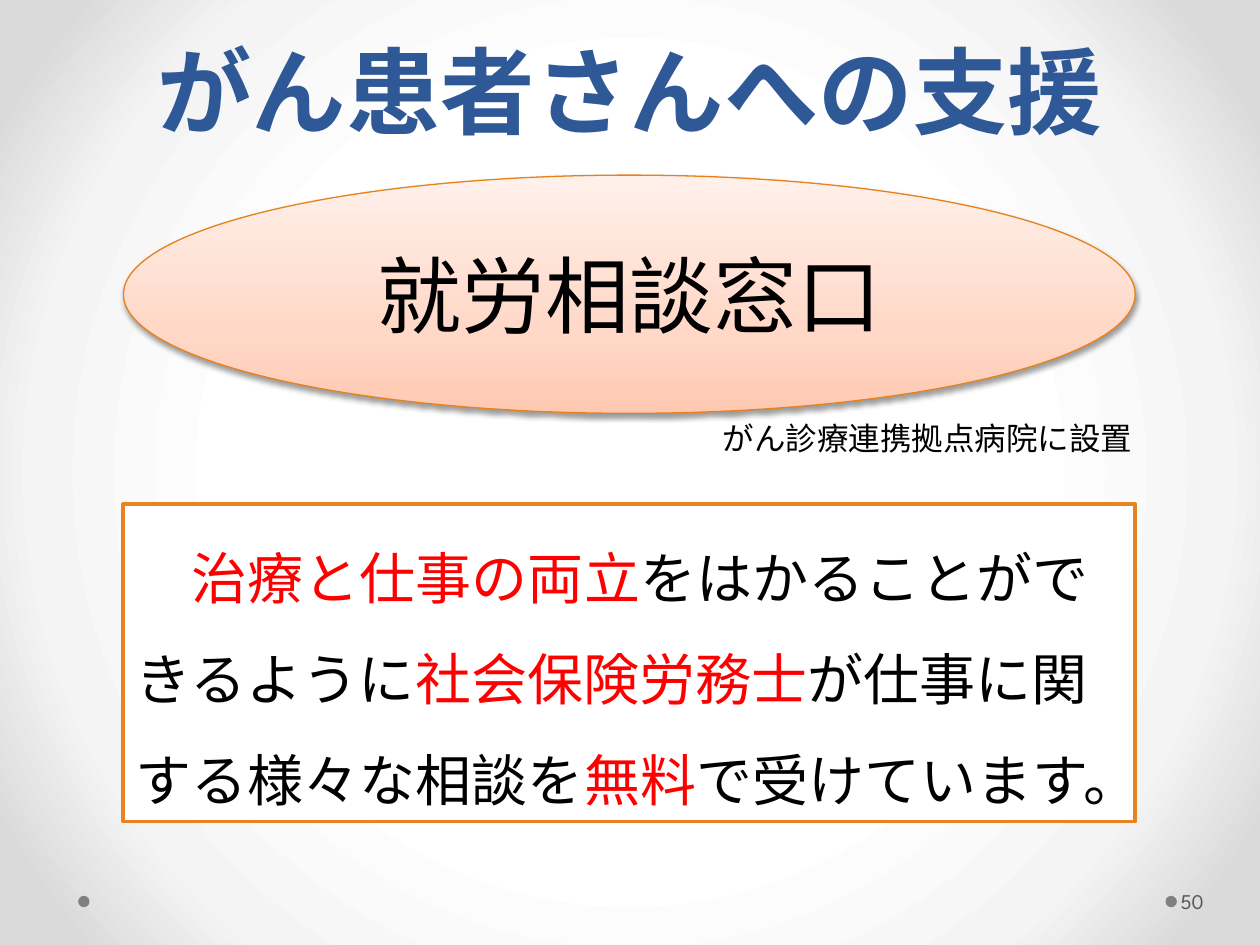
from lxml import etree
from pptx import Presentation, util as u
from pptx.dml.color import RGBColor
from pptx.enum import shapes, text
from pptx.oxml.ns import qn

WIDE, HIGH = 10, 7.5
LEFT, SPAN = 0.98, 8.03  # shared column of the oval and the box
CJK = "Noto Sans CJK JP"
HUES = {
    "title": "2F5897", "ink": "000000", "key": "FF0000", "white": "FFFFFF",
    "rim": "E6811C", "frame": "E68422", "dot": "808080", "page": "595959",
}
GLOW = [(0, "FFFFFF"), (50, "FFFFFF"), (76, "F4F4F4"), (92, "DADADA"), (100, "DADADA")]
PEACH = [(0, "FFC9B1"), (35, "FFD8C8"), (100, "FFF0EA")]


def hue(name):
    return RGBColor.from_string(HUES[name])


def node(parent, tag, **attrs):
    item = etree.SubElement(parent, qn(tag))
    for key, value in attrs.items():
        item.set(key, str(value))
    return item


def blend(fill, root, stops, angle=None):
    """Fill with many stops: linear at an angle, or circular from the centre."""
    fill.solid()
    old = root.find(qn("a:solidFill"))
    grad = etree.Element(qn("a:gradFill"), rotWithShape="1")
    row = node(grad, "a:gsLst")
    for pos, color in stops:
        node(node(row, "a:gs", pos=pos * 1000), "a:srgbClr", val=color)
    if angle is None:
        way = node(grad, "a:path", path="circle")
        node(way, "a:fillToRect", l=50000, t=50000, r=50000, b=50000)
    else:
        node(grad, "a:lin", ang=angle * 60000, scaled=0)
    root.replace(old, grad)


def shade(shape, alpha, blur, dist):
    """Drop a black shadow straight down."""
    effects = shape.element.spPr.find(qn("a:effectLst"))
    outer = node(effects, "a:outerShdw", blurRad=u.Pt(blur), dist=u.Pt(dist),
                 dir=90 * 60000, rotWithShape=0)
    color = node(outer, "a:srgbClr", val=HUES["ink"])
    node(color, "a:alpha", val=alpha * 1000)


def form(slide, kind, at, fill=None, line=None, width=1):
    shape = slide.shapes.add_shape(kind, *map(u.Inches, at))
    shape.shadow.inherit = False
    if fill:
        shape.fill.solid()
        shape.fill.fore_color.rgb = hue(fill)
    if line:
        shape.line.color.rgb = hue(line)
        shape.line.width = u.Pt(width)
    else:
        shape.line.fill.background()
    return shape


def label(slide, at):
    return slide.shapes.add_textbox(*map(u.Inches, at))


def write(shape, runs, size, font=CJK, bold=False, align="CENTER",
          anchor="MIDDLE", space=None):
    """Write one paragraph from (words, hue name) pairs."""
    frame = shape.text_frame
    frame.word_wrap = True
    frame.vertical_anchor = text.MSO_ANCHOR[anchor]
    para = frame.paragraphs[0]
    para.alignment = text.PP_ALIGN[align]
    para.line_spacing = space
    for words, color in runs:
        run = para.add_run()
        run.text = words
        run.font.size = u.Pt(size)
        run.font.bold = bold
        run.font.name = font
        run.font.color.rgb = hue(color)
        node(run.font._element, "a:ea", typeface=CJK)


def main():
    deck = Presentation()
    deck.slide_width, deck.slide_height = u.Inches(WIDE), u.Inches(HIGH)
    slide = deck.slides.add_slide(deck.slide_layouts[6])
    oval = shapes.MSO_SHAPE.OVAL

    back = slide.background.fill
    back.solid()
    blend(back, slide.element.find(".//" + qn("p:bgPr")), GLOW)

    for x in (9.25, 0.62):
        form(slide, oval, (x, 7.11, 0.09, 0.09), "dot")

    title = label(slide, (0.05 * WIDE, 0.21, 0.9 * WIDE, 1.1))
    write(title, [("がん患者さんへの支援", "title")], 54, "Vollkorn",
          bold=True, space=u.Pt(58))

    desk = form(slide, oval, (LEFT, 1.39, SPAN, 1.89), line="rim", width=0.75)
    blend(desk.fill, desk.element.spPr, PEACH, 270)
    shade(desk, 38, 3.1, 1.6)
    write(desk, [("就労相談窓口", "ink")], 48)

    box = form(slide, shapes.MSO_SHAPE.RECTANGLE, (LEFT, 4, SPAN, 2.52),
               "white", "frame", 2.25)
    write(box, [
        ("\u3000".strip() or "　", "ink"),
        ("治療と仕事の両立", "key"),
        ("をはかることができるように", "ink"),
        ("社会保険労務士", "key"),
        ("が仕事に関する様々な相談を", "ink"),
        ("無料", "key"),
        ("で受けています。", "ink"),
    ], 32, "Vollkorn", align="LEFT", anchor="TOP", space=1.5)

    note = label(slide, (5.39, 3.28, 3.94, 0.4))
    write(note, [("がん診療連携拠点病院に設置", "ink")], 18, anchor="TOP")

    page = label(slide, (9.34, 6.95, 0.61, 0.4))
    page.text_frame.margin_left = u.Inches(0.03)
    page.text_frame.margin_right = u.Inches(0.05)
    write(page, [("50", "page")], 12, "League Spartan", align="LEFT")

    deck.save("out.pptx")


if __name__ == "__main__":
    main()
